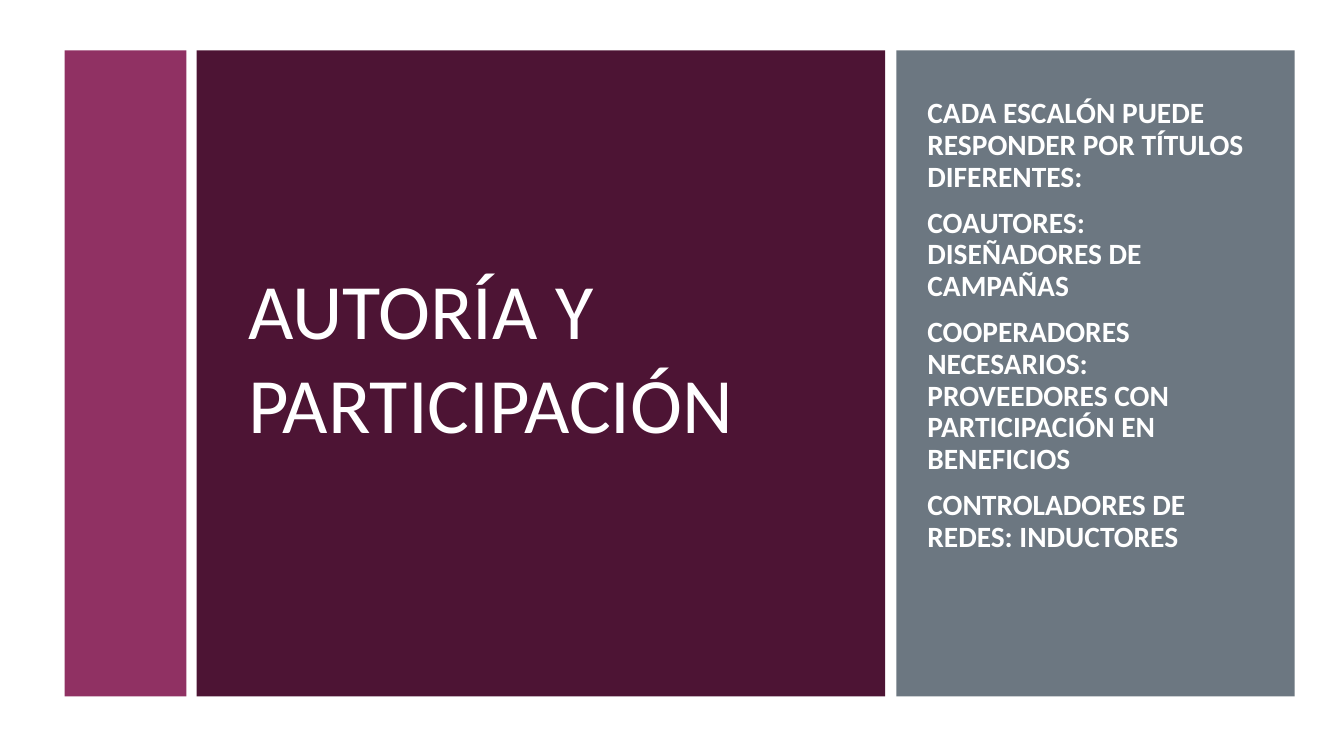
import pptx
import pptx.dml.color
import pptx.enum.shapes
import pptx.enum.text
import pptx.util

Inches = pptx.util.Inches
Pt = pptx.util.Pt
COLORS = {"plum": "4D1434", "berry": "903163", "slate": "6C7781", "white": "FFFFFF"}


def rgb(name):
    return pptx.dml.color.RGBColor.from_string(COLORS[name])


def write(box, paragraphs, font_format, paragraph_format):
    """Fill a box with left-aligned, vertically centred white paragraphs."""
    frame = box.text_frame
    frame.word_wrap = True
    frame.auto_size = pptx.enum.text.MSO_AUTO_SIZE.NONE
    frame.vertical_anchor = pptx.enum.text.MSO_ANCHOR.MIDDLE
    for index, text in enumerate(paragraphs):
        para = frame.add_paragraph() if index else frame.paragraphs[0]
        para.alignment = pptx.enum.text.PP_ALIGN.LEFT
        for name, value in paragraph_format.items():
            setattr(para, name, value)
        para.space_before = Pt(4.2 if index else 0)
        span = para.add_run()
        span.text = text
        span.font.name = "Calibri"
        span.font.color.rgb = rgb("white")
        for name, value in font_format.items():
            setattr(span.font, name, value)


deck = pptx.Presentation()
deck.slide_width = Inches(13.33)
deck.slide_height = Inches(7.5)
page = deck.slides.add_slide(deck.slide_layouts.get_by_name("Title Only"))

panel_top, panel_height = Inches(0.5), Inches(6.41)
for left, width, color in [(0.64, 1.21, "berry"), (1.95, 6.83, "plum"), (8.89, 3.95, "slate")]:
    panel = page.shapes.add_shape(
        pptx.enum.shapes.MSO_SHAPE.RECTANGLE,
        Inches(left), panel_top, Inches(width), panel_height)
    panel.shadow.inherit = False
    panel.fill.solid()
    panel.fill.fore_color.rgb = rgb(color)
    panel.line.fill.background()

# Bring the title in front of the panels
title = page.shapes.title
title.element.getparent().append(title.element)
title.left, title.top = Inches(2.36), Inches(0.93)
title.width, title.height = Inches(6.04), Inches(5.19)
write(title, ["AUTORÍA Y PARTICIPACIÓN"], {"size": Pt(56)}, {})

roles = page.shapes.add_textbox(Inches(9.1), Inches(0.73), Inches(3.44), Inches(5.39))
roles.text_frame.margin_bottom = Inches(0.43)
write(
    roles,
    [
        "CADA ESCALÓN PUEDE RESPONDER POR TÍTULOS DIFERENTES:",
        "COAUTORES: DISEÑADORES DE CAMPAÑAS",
        "COOPERADORES NECESARIOS: PROVEEDORES CON PARTICIPACIÓN EN BENEFICIOS",
        "CONTROLADORES DE REDES: INDUCTORES",
    ],
    {"size": Pt(21), "bold": True},
    {"line_spacing": 0.9, "space_after": Pt(6)},
)

deck.save("out.pptx")
